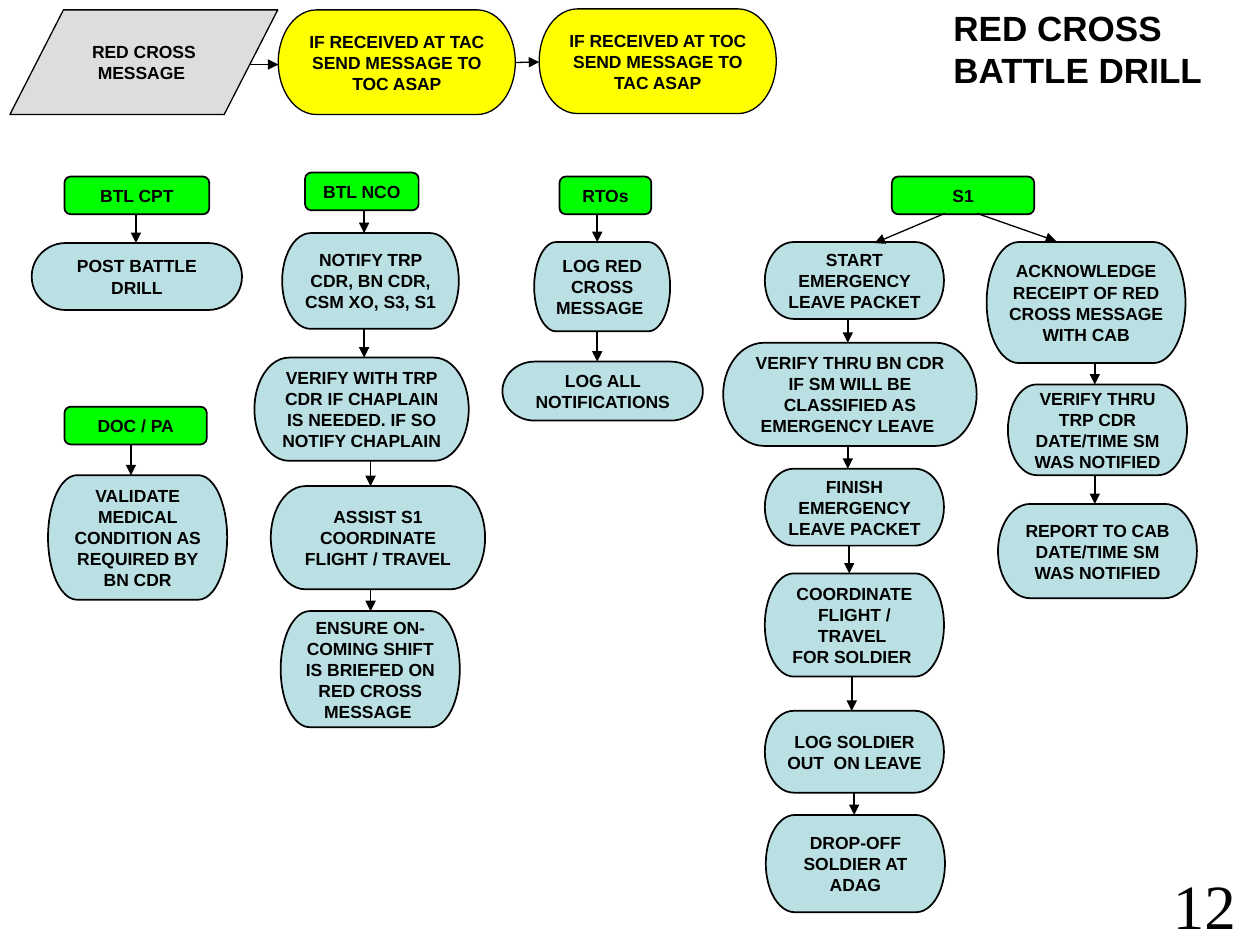
from lxml import etree
from pptx import Presentation
from pptx.dml.color import RGBColor
from pptx.enum.shapes import MSO_CONNECTOR, MSO_SHAPE
from pptx.enum.text import MSO_ANCHOR, PP_ALIGN
from pptx.oxml.ns import qn
from pptx.util import Cm, Pt

STRAIGHT = MSO_CONNECTOR.STRAIGHT
INPUT = MSO_SHAPE.FLOWCHART_DATA
STEP = MSO_SHAPE.FLOWCHART_TERMINATOR
ROLE = MSO_SHAPE.FLOWCHART_ALTERNATE_PROCESS
MIDDLE = MSO_ANCHOR.MIDDLE
LEFT, CENTER = PP_ALIGN.LEFT, PP_ALIGN.CENTER

BLACK, GREY, YELLOW = "000000", "DDDDDD", "FFFF00"
GREEN, BLUE = "00FF00", "BBE0E3"
ROLE_H = 0.76
STEP_W = 3.61

CAPTAIN = [
    (0, 1.34, 4.24, 1.35, "POST BATTLE DRILL", 2.1),
]
DOCTOR = [
    (0, 1.38, STEP_W, 2.51, "VALIDATE MEDICAL CONDITION AS REQUIRED BY BN CDR", 1.67),
]
NCO = [
    (0.56, 1.22, 3.56, 1.93, "NOTIFY TRP CDR, BN CDR, CSM XO, S3, S1", 2.21),
    (0, 3.73, 4.32, 2.08, "VERIFY WITH TRP CDR IF CHAPLAIN IS NEEDED. IF SO NOTIFY CHAPLAIN", 2.21),
    (0.33, 6.32, 4.32, 2.08, "ASSIST S1 COORDINATE FLIGHT / TRAVEL", 2.34),
    (0.53, 8.84, STEP_W, 2.34, "ENSURE ON-COMING SHIFT IS BRIEFED ON RED CROSS MESSAGE ", 2.34),
]
RTOS = [
    (0.64, 1.32, 2.74, 1.8, "LOG RED CROSS MESSAGE ", 1.91),
    (0, 3.73, 4.04, 1.19, "LOG ALL NOTIFICATIONS", 1.91),
]
S1_LEAVE = [
    (0.84, 1.32, STEP_W, 1.55, "START EMERGENCY LEAVE PACKET", None),
    (0, 3.35, 5.11, 2.08, "VERIFY THRU BN CDR IF SM WILL BE CLASSIFIED AS EMERGENCY LEAVE ", 2.51),
    (0.84, 5.89, STEP_W, 1.55, "FINISH EMERGENCY LEAVE PACKET", 2.51),
    (0.84, 8, STEP_W, 2.08, "COORDINATE FLIGHT / TRAVEL \nFOR SOLDIER ", 2.54),
    (0.84, 10.77, STEP_W, 1.65, "LOG SOLDIER OUT  ON LEAVE", 2.59),
    (0.86, 12.87, STEP_W, 1.96, "DROP-OFF SOLDIER AT ADAG", 2.64),
]
S1_REPORT = [
    (5.31, 1.32, 4.01, 2.44, "ACKNOWLEDGE RECEIPT OF RED CROSS MESSAGE WITH CAB", None),
    (5.74, 4.19, STEP_W, 1.83, "VERIFY THRU TRP CDR DATE/TIME SM WAS NOTIFIED", 7.49),
    (5.54, 6.6, 4.01, 1.9, "REPORT TO CAB DATE/TIME SM WAS NOTIFIED", 7.49),
]


def rgb(value):
    """Turn a hex string into a colour."""
    return RGBColor.from_string(value)


def write(tf, text, size, font="Arial", bold=True, align=CENTER):
    """Write each line of text as a paragraph with one run."""
    for i, line in enumerate(text.split("\n")):
        p = tf.paragraphs[0] if i == 0 else tf.add_paragraph()
        p.alignment = align
        r = p.add_run()
        r.text = line
        r.font.name = font
        r.font.size = Pt(size)
        r.font.bold = bold
        r.font.color.rgb = rgb(BLACK)


def add_node(s, kind, fill, left, top, width, height, text, line=1, pad=0.0):
    """Add one flowchart shape with its label."""
    sp = s.shapes.add_shape(kind, Cm(left), Cm(top), Cm(width), Cm(height))
    sp.shadow.inherit = False
    sp.fill.solid()
    sp.fill.fore_color.rgb = rgb(fill)
    sp.line.color.rgb = rgb(BLACK)
    sp.line.width = Pt(line)
    tf = sp.text_frame
    tf.word_wrap = True
    tf.vertical_anchor = MIDDLE
    tf.margin_top = tf.margin_bottom = Cm(pad)
    write(tf, text, 10)


def add_arrow(s, x1, y1, x2, y2, width=1):
    """Add a straight arrow with a triangular head at its end."""
    cxn = s.shapes.add_connector(STRAIGHT, Cm(x1), Cm(y1), Cm(x2), Cm(y2))
    cxn.line.color.rgb = rgb(BLACK)
    cxn.line.width = Pt(width)
    etree.SubElement(cxn.line._get_or_add_ln(), qn("a:tailEnd"), type="triangle")
    etree.SubElement(cxn._element.spPr, qn("a:effectLst"))


def add_label(s, left, top, width, height, text, size, font, bold, align):
    """Add a plain text box."""
    tf = s.shapes.add_textbox(Cm(left), Cm(top), Cm(width), Cm(height)).text_frame
    tf.word_wrap = True
    write(tf, text, size, font, bold, align)


def add_trigger(s, left, top):
    """Add the row that receives and passes on the message."""
    add_arrow(s, left + 2.82, top + 1.12, left + 5.41, top + 1.12, 0.75)
    add_arrow(s, left + 8.11, top + 1.12, left + 10.67, top + 1.07, 0.75)
    for kind, fill, dx, dy, width, text in (
        (INPUT, GREY, 0, 0.02, 5.4, "RED CROSS MESSAGE "),
        (STEP, YELLOW, 5.41, 0.02, 4.78, "IF RECEIVED AT TAC SEND MESSAGE TO TOC ASAP"),
        (STEP, YELLOW, 10.67, 0, 4.78, "IF RECEIVED AT TOC SEND MESSAGE TO TAC ASAP"),
    ):
        add_node(s, kind, fill, left + dx, top + dy, width, 2.11, text, 0.75, 0.13)


def add_role(s, left, top, width, text):
    """Add the heading of a lane."""
    add_node(s, ROLE, GREEN, left, top, width, ROLE_H, text, pad=0.13)


def add_steps(s, left, top, steps, start=ROLE_H):
    """Add a chain of steps, each joined to the bottom of the one above."""
    bottom = start
    for dx, dy, width, height, text, axis in steps:
        add_node(s, STEP, BLUE, left + dx, top + dy, width, height, text)
        if axis is not None:
            add_arrow(s, left + axis, top + bottom, left + axis, top + dy)
        bottom = dy + height


def add_lane(s, left, top, role_dx, role_width, role, steps):
    """Add one role with its chain of steps."""
    add_role(s, left + role_dx, top, role_width, role)
    add_steps(s, left, top, steps)


def add_s1_lane(s, left, top):
    """Add the S1 role, which splits into two chains."""
    add_role(s, left + 3.4, top, 2.87, "S1")
    for steps in (S1_LEAVE, S1_REPORT):
        add_steps(s, left, top, steps)
    add_arrow(s, left + 4.47, top + 0.74, left + 3.05, top + 1.34, 0.75)
    add_arrow(s, left + 5.11, top + 0.74, left + 6.71, top + 1.3, 0.75)


def main():
    """Build the battle drill slide."""
    prs = Presentation()
    prs.slide_width, prs.slide_height = Cm(25.4), Cm(19.05)
    s = prs.slides.add_slide(prs.slide_layouts[6])
    add_label(s, 18.97, 0, 6.35, 2.13, "RED CROSS BATTLE DRILL", 20, "Arial", True, LEFT)
    add_trigger(s, 0.2, 0.18)
    add_lane(s, 0.64, 3.56, 0.66, 2.92, "BTL CPT", CAPTAIN)
    add_lane(s, 0.97, 8.2, 0.33, 2.87, "DOC / PA", DOCTOR)
    add_lane(s, 5.13, 3.48, 1.02, 2.29, "BTL NCO", NCO)
    add_lane(s, 10.13, 3.56, 1.15, 1.85, "RTOs", RTOS)
    add_s1_lane(s, 14.58, 3.56)
    add_label(s, 23.24, 17.35, 2.08, 1.6, "12", 36, "Times New Roman", False, CENTER)
    prs.save("out.pptx")


if __name__ == "__main__":
    main()
